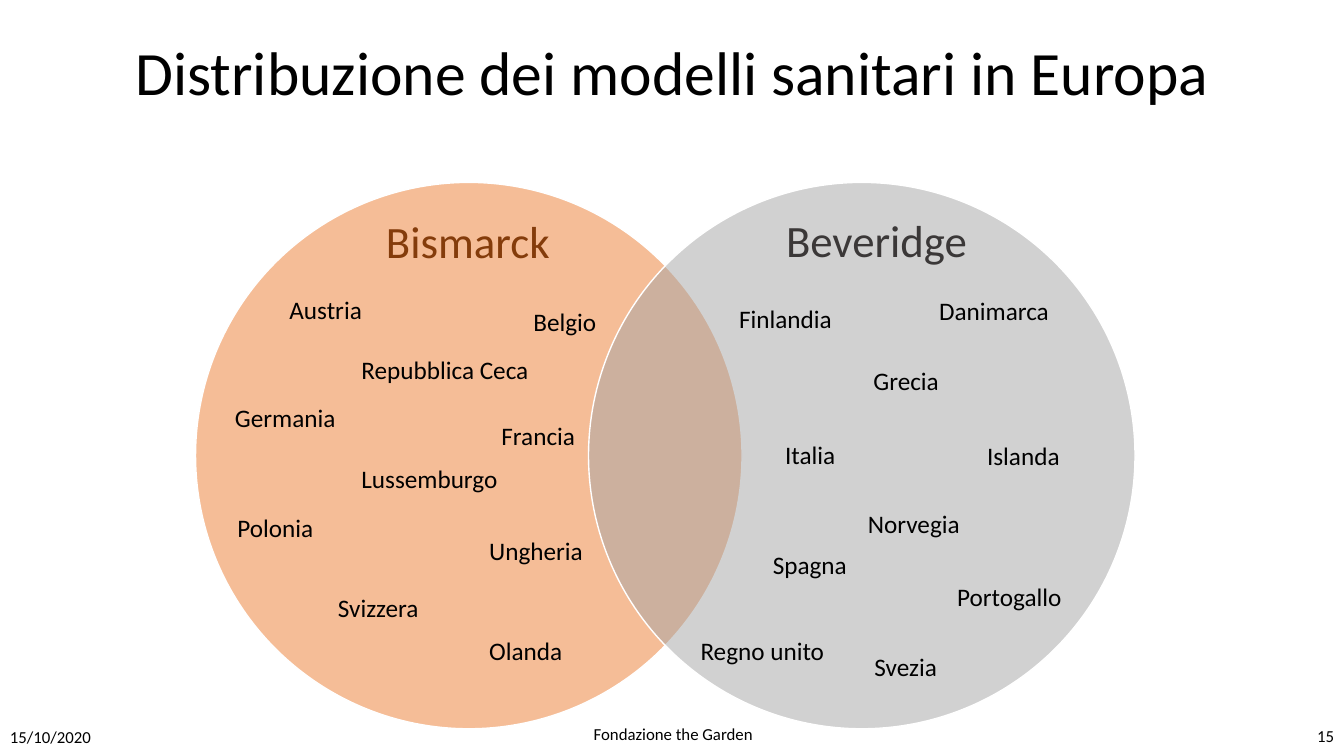
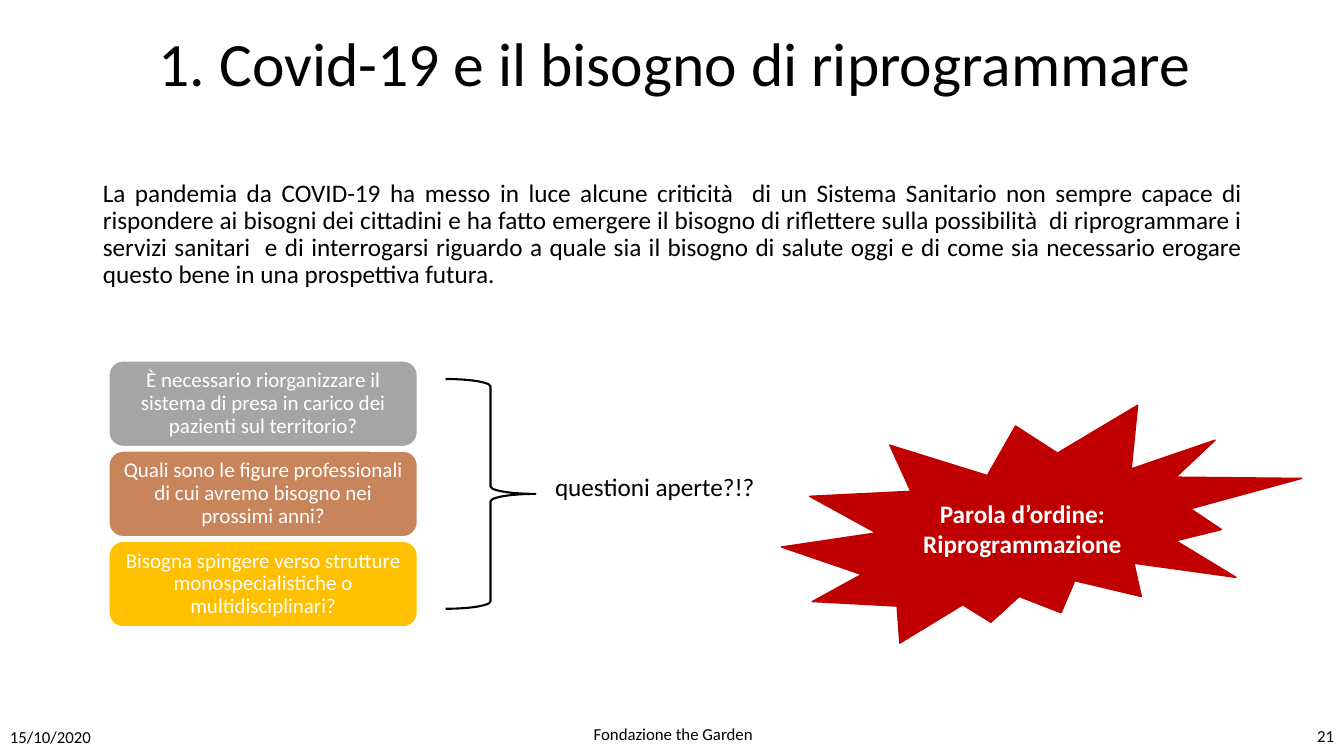
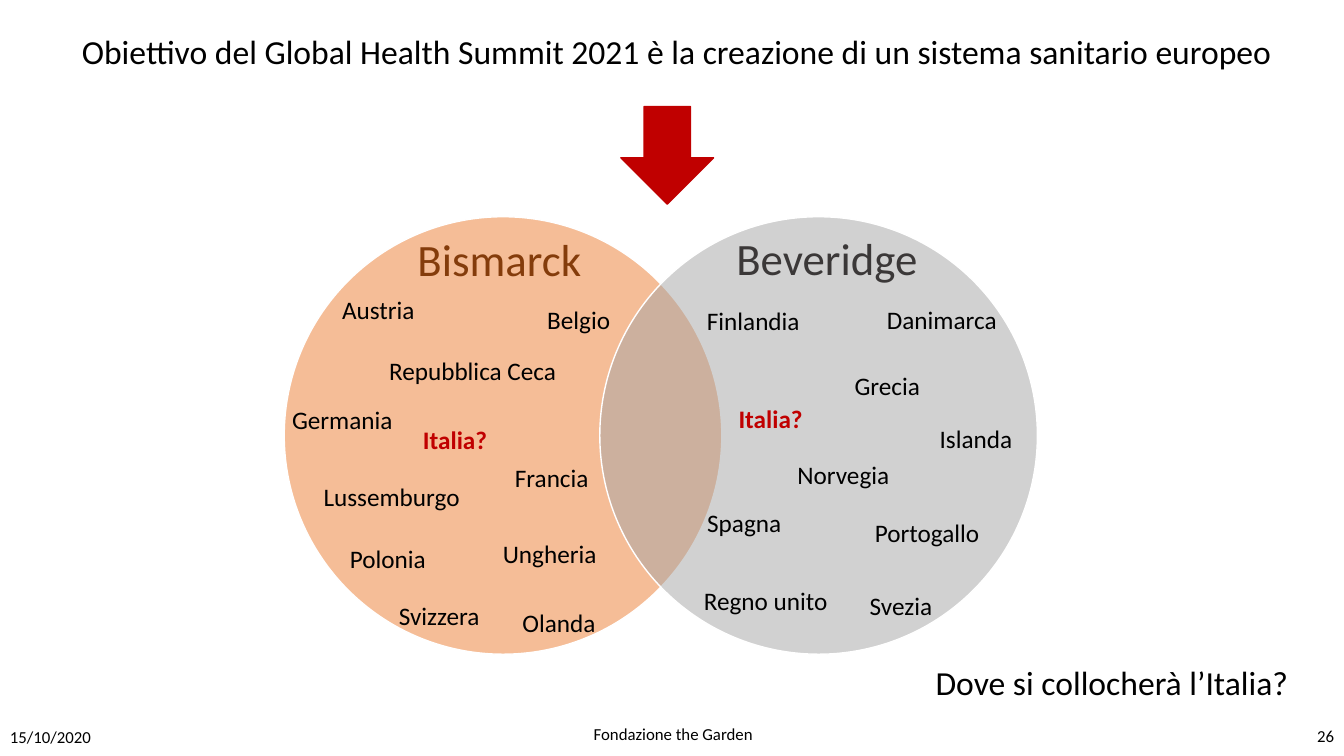
from dataclasses import dataclass

from lxml import etree
from pptx import Presentation
from pptx import util as u
from pptx.dml.color import RGBColor
from pptx.enum import shapes, text
from pptx.oxml.ns import qn

FONT = "Calibri"
COLORS = {
    "ink": "000000", "white": "FFFFFF", "red": "C00000",
    "orange": "ED7D31", "grey": "A5A5A5", "brown": "C8845A", "gold": "FFC000",
    "bismarck": "843C0B", "beveridge": "3B3838",
}
LEFT, CENTER, RIGHT, JUSTIFY = (
    text.PP_ALIGN.LEFT, text.PP_ALIGN.CENTER, text.PP_ALIGN.RIGHT, text.PP_ALIGN.JUSTIFY)
MIDDLE = text.MSO_ANCHOR.MIDDLE
SHAPE = shapes.MSO_SHAPE
LABEL_HEIGHT, HEADING_WIDTH, HEADING_HEIGHT = 0.4, 2.31, 0.64


@dataclass
class Box:
    """A rectangle in inches."""
    left: float
    top: float
    width: float
    height: float

    def share(self, x, y, width, height):
        """Inner box, given in percent of this one."""
        return self.at(x, y, self.width * width / 100, self.height * height / 100)

    def at(self, x, y, width, height):
        """Box of a fixed size in inches, placed in percent of this one."""
        return Box(self.left + self.width * x / 100,
                   self.top + self.height * y / 100, width, height)

    def emu(self):
        return [u.Inches(n) for n in (self.left, self.top, self.width, self.height)]


PAGE = Box(0, 0, 13.33, 7.5)

# Label widths in inches
WIDTHS = {
    "Austria": 1.91, "Belgio": 1.22, "Repubblica Ceca": 2.22, "Francia": 1.22,
    "Germania": 1.63, "Ungheria": 1.22, "Lussemburgo": 1.63, "Olanda": 1.22,
    "Polonia": 1.38, "Svizzera": 1.63, "Danimarca": 1.66, "Finlandia": 1.34,
    "Grecia": 1.52, "Islanda": 1.63, "Italia": 1.34, "Italia?": 1.34,
    "Norvegia": 1.52, "Portogallo": 1.38, "Spagna": 1.34, "Svezia": 1.38,
    "Regno unito": 1.5,
}
CENTERED = {"Austria", "Germania", "Spagna"}

# Label places in percent of the diagram
MODELS_TODAY = {
    "headings": [(16.6, 4.8), (60.1, 4.6)],
    "countries": [
        ("Austria", 3.6, 19.6), ("Belgio", 34.9, 21.8), ("Repubblica Ceca", 16.6, 30.6),
        ("Francia", 31.5, 42.6), ("Germania", 0.8, 39.3), ("Ungheria", 30.2, 63.7),
        ("Lussemburgo", 16.6, 50.6), ("Olanda", 30.2, 81.9), ("Polonia", 3.4, 59.4),
        ("Svizzera", 14.1, 74.2), ("Danimarca", 78.1, 19.7), ("Finlandia", 56.8, 21.2),
        ("Grecia", 71.1, 32.5), ("Islanda", 83.2, 46.3), ("Italia", 61.7, 46.1),
        ("Norvegia", 70.5, 58.7), ("Portogallo", 80, 72.1), ("Spagna", 58.2, 66.2),
        ("Svezia", 71.2, 84.9), ("Regno unito", 52.7, 81.9),
    ],
}
MODELS_FUTURE = {
    "headings": [(13.1, 2.3), (56.6, 2.1)],
    "countries": [
        ("Austria", -0.3, 16.6), ("Belgio", 33.6, 18.9), ("Repubblica Ceca", 12.6, 30.6),
        ("Francia", 29.3, 55.1), ("Germania", -3.2, 41.7), ("Ungheria", 27.7, 72.4),
        ("Lussemburgo", 3.9, 59.4), ("Olanda", 30.3, 88.2), ("Polonia", 7.4, 73.5),
        ("Svizzera", 13.9, 86.6), ("Danimarca", 78.7, 18.9), ("Finlandia", 54.8, 19.1),
        ("Grecia", 74.4, 33.9), ("Islanda", 85.7, 46.1), ("Italia?", 59, 41.5),
        ("Norvegia", 66.8, 54.4), ("Portogallo", 77.1, 67.5), ("Spagna", 52.1, 65.4),
        ("Svezia", 76.4, 84.3), ("Regno unito", 54.4, 83.2), ("Italia?", 17.1, 46.3),
    ],
}
PANDEMIC = (
    "La pandemia da COVID-19 ha messo in luce alcune criticità  di un Sistema Sanitario "
    "non sempre capace di rispondere ai bisogni dei cittadini e ha fatto emergere il "
    "bisogno di riflettere sulla possibilità  di riprogrammare i servizi sanitari  e di "
    "interrogarsi riguardo a quale sia il bisogno di salute oggi e di come sia necessario "
    "erogare questo bene in una prospettiva futura.")
QUESTIONS = [
    ("È necessario riorganizzare il sistema di presa in carico dei pazienti sul territorio?",
     "grey"),
    ("Quali sono le figure professionali di cui avremo bisogno nei prossimi anni?", "brown"),
    ("Bisogna spingere verso strutture monospecialistiche o multidisciplinari?", "gold"),
]


# Shared helpers
def rgb(name):
    return RGBColor.from_string(COLORS[name])


def write(shape, words, size, color="ink", align=LEFT, bold=False, spacing=None, anchor=None):
    frame = shape.text_frame
    frame.text = words
    frame.word_wrap = True
    frame.auto_size = text.MSO_AUTO_SIZE.NONE
    if anchor is not None:
        frame.vertical_anchor = anchor
    para = frame.paragraphs[0]
    para.alignment = align
    if spacing:
        para.line_spacing = spacing
    for span in para.runs:
        span.font.name, span.font.size, span.font.bold = FONT, u.Pt(size), bold
        span.font.color.rgb = rgb(color)
    return para


def add_label(page, box, words, size=18, **style):
    write(page.shapes.add_textbox(*box.emu()), words, size, **style)


def add_figure(page, kind, box, fill=None, line="white", weight=1, alpha=None):
    figure = page.shapes.add_shape(kind, *box.emu())
    figure.shadow.inherit = False
    figure.line.color.rgb = rgb(line)
    figure.line.width = u.Pt(weight)
    if fill is None:
        figure.fill.background()
    else:
        figure.fill.solid()
        figure.fill.fore_color.rgb = rgb(fill)
    if alpha:
        color = figure.element.spPr.find(qn("a:solidFill"))[0]
        etree.SubElement(color, qn("a:alpha")).set("val", str(alpha * 1000))
    return figure


def move(shape, box):
    shape.left, shape.top, shape.width, shape.height = box.emu()


def add_page(deck, layout, title, box, size, number):
    """Slide with its title and footer."""
    page = deck.slides.add_slide(deck.slide_layouts[layout])
    move(page.shapes.title, box)
    write(page.shapes.title, title, size, align=CENTER, spacing=0.9, anchor=MIDDLE)
    for words, x, y, width, align in [
            ("15/10/2020", 0, 94.8, 22.5, LEFT),
            ("Fondazione the Garden", 33.2, 94.4, 33.8, CENTER),
            (str(number), 77.5, 94.7, 22.5, RIGHT)]:
        add_label(page, PAGE.share(x, y, width, 5.3), words, 12, align=align, anchor=MIDDLE)
    return page


# Regions
def add_venn(page, box, models):
    """Two overlapping circles as tall as the box, with headings and countries."""
    size = box.height
    for left, fill in [(box.left, "orange"), (box.left + box.width - size, "grey")]:
        add_figure(page, SHAPE.OVAL, Box(left, box.top, size, size), fill, alpha=50)
    for name, (x, y) in zip(("Bismarck", "Beveridge"), models["headings"]):
        add_label(page, box.at(x, y, HEADING_WIDTH, HEADING_HEIGHT), name, 32,
                  color=name.lower(), align=CENTER)
    for name, x, y in models["countries"]:
        open_question = name.endswith("?")
        add_label(page, box.at(x, y, WIDTHS[name], LABEL_HEIGHT), name,
                  color="red" if open_question else "ink", bold=open_question,
                  align=CENTER if name in CENTERED else LEFT)


def add_questions(page, box):
    """Stack of equal cards, evenly spread over the box."""
    height = 32.2
    pitch = (100 - height) / (len(QUESTIONS) - 1)
    for row, (words, fill) in enumerate(QUESTIONS):
        card = add_figure(page, SHAPE.ROUNDED_RECTANGLE,
                          box.share(0, row * pitch, 100, height), fill)
        write(card, words, 15, "white", CENTER, spacing=0.9, anchor=MIDDLE)
        frame = card.text_frame
        frame.margin_left = frame.margin_right = u.Inches(0.1)
        frame.margin_top = frame.margin_bottom = u.Inches(0.07)


def add_intro(body, box):
    """Justified body paragraph without a bullet."""
    move(body, box)
    para = write(body, PANDEMIC, 18, align=JUSTIFY, spacing=0.9)
    para.space_before = u.Pt(10)
    properties = para._p.get_or_add_pPr()
    properties.set("marL", "0")
    properties.set("indent", "0")
    etree.SubElement(properties, qn("a:buNone"))


# Slides
def models_slide(deck):
    page = add_page(deck, 5, "Distribuzione dei modelli sanitari in Europa",
                    PAGE.share(6.9, 0.3, 86.3, 19.3), 44, 15)
    add_venn(page, PAGE.share(14.55, 24.13, 69.9, 72.27), MODELS_TODAY)


def covid_slide(deck):
    page = add_page(deck, 1, "1. Covid-19 e il bisogno di riprogrammare",
                    PAGE.share(0.5, 3.6, 99.5, 10.5), 44, 21)
    add_intro(page.placeholders[1], PAGE.share(6.9, 23.2, 86.3, 63.5))
    add_questions(page, PAGE.share(8.1, 47.73, 22.96, 35.2))
    add_figure(page, SHAPE.RIGHT_BRACE, PAGE.share(33.16, 50.13, 6.68, 30.4),
               line="ink", weight=1.5)
    add_label(page, PAGE.share(33.16, 61.73, 31.13, 5.33), "questioni aperte?!?",
              align=CENTER)
    burst = add_figure(page, SHAPE.EXPLOSION2, PAGE.share(58.14, 53.6, 38.71, 31.47),
                       "red", "red")
    write(burst, "Parola d’ordine: Riprogrammazione", 18, "white", CENTER, True,
          anchor=MIDDLE)


def summit_slide(deck):
    page = add_page(
        deck, 5,
        "Obiettivo del Global Health Summit 2021 è la creazione di un sistema sanitario europeo",
        PAGE.share(1.6, 3.7, 97.5, 6.7), 24, 26)
    add_venn(page, PAGE.share(21.15, 28.67, 56.04, 57.87), MODELS_FUTURE)
    add_figure(page, SHAPE.DOWN_ARROW, PAGE.share(46.2, 14.1, 6.9, 12.9), "red", "red")
    add_label(page, PAGE.share(67.5, 86.93, 30.46, 6.67), "Dove si collocherà l’Italia?",
              24, align=CENTER)


def main():
    deck = Presentation()
    deck.slide_width, deck.slide_height = u.Inches(PAGE.width), u.Inches(PAGE.height)
    for build in (models_slide, covid_slide, summit_slide):
        build(deck)
    deck.save("out.pptx")


if __name__ == "__main__":
    main()
